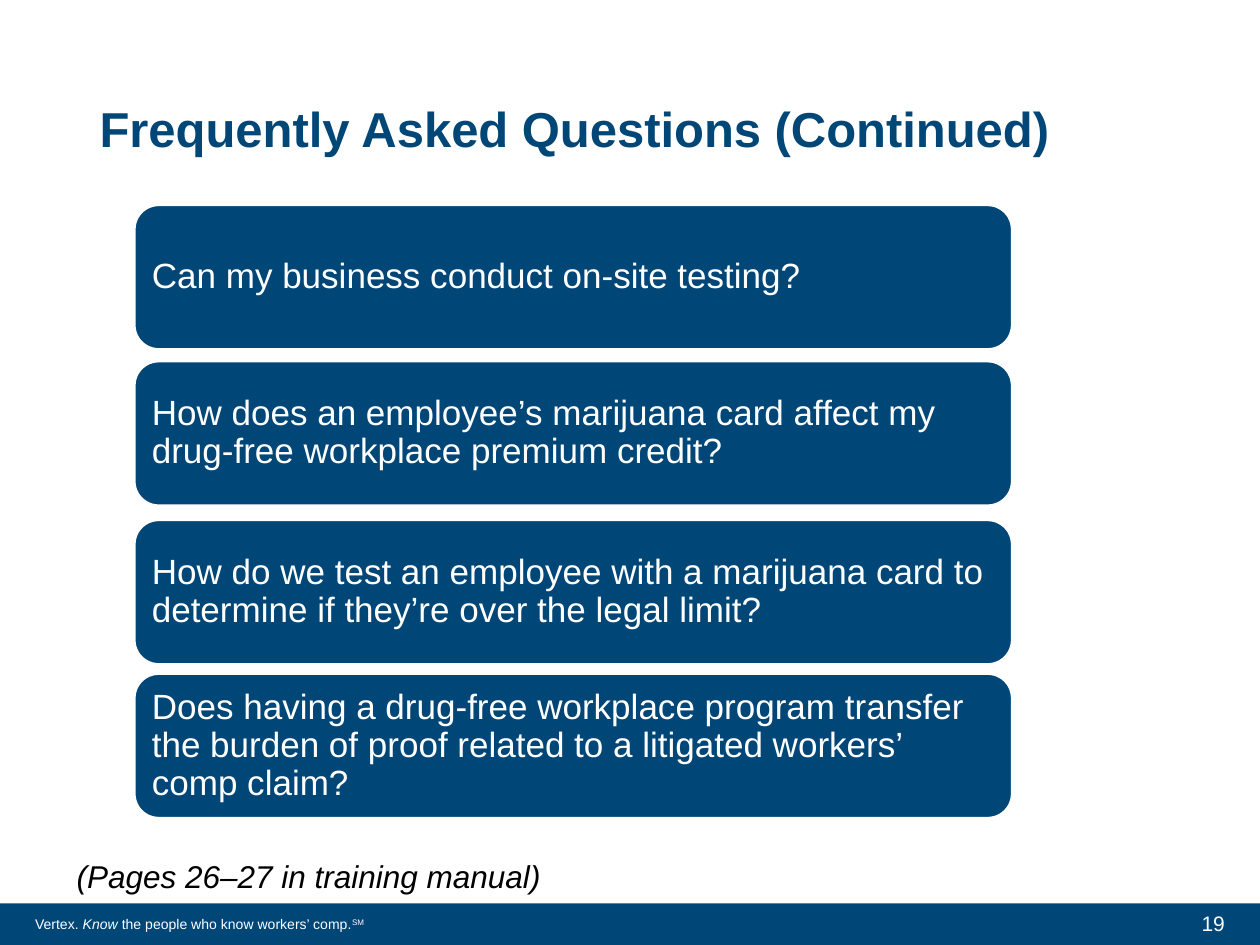
"""Build the frequently asked questions slide of a workplace training deck."""
import pptx
import pptx.dml.color
import pptx.enum.shapes
import pptx.enum.text
import pptx.util
from pptx.util import Inches

NAVY = pptx.dml.color.RGBColor(0x00, 0x46, 0x77)
WHITE = pptx.dml.color.RGBColor(0xFF, 0xFF, 0xFF)
BLACK = pptx.dml.color.RGBColor(0x00, 0x00, 0x00)
FONT = "Arial"
SHAPES = pptx.enum.shapes.MSO_SHAPE
ANCHOR = pptx.enum.text.MSO_ANCHOR
ALIGN = pptx.enum.text.PP_ALIGN

QUESTIONS = [
    (1.63, "Can my business conduct on-site testing?"),
    (2.87, "How does an employee’s marijuana card affect my drug-free workplace premium credit?"),
    (4.13, "How do we test an employee with a marijuana card to determine if they’re over the legal limit?"),
    (5.35, "Does having a drug-free workplace program transfer the burden of proof "
           "related to a litigated workers’ comp claim?"),
]


def format_run(run, size, color, bold=False, italic=False):
    """Set the font of one run."""
    run.font.name = FONT
    run.font.size = pptx.util.Pt(size)
    run.font.color.rgb = color
    run.font.bold = bold
    run.font.italic = italic


def write_text(shape, text, size, color, anchor=ANCHOR.TOP, align=ALIGN.LEFT,
               line_spacing=1.0, bold=False, italic=False):
    """Write one formatted paragraph into a shape."""
    frame = shape.text_frame
    frame.text = text
    frame.word_wrap = True
    frame.auto_size = pptx.enum.text.MSO_AUTO_SIZE.NONE
    frame.vertical_anchor = anchor
    paragraph = frame.paragraphs[0]
    paragraph.alignment = align
    paragraph.line_spacing = line_spacing
    for run in paragraph.runs:
        format_run(run, size, color, bold, italic)


def add_title(slide, text):
    """Place and format the title placeholder."""
    title = slide.shapes.title
    title.left, title.top = Inches(0.69), Inches(0.32)
    title.width, title.height = Inches(8.62), Inches(1.45)
    write_text(title, text, 28, NAVY, ANCHOR.MIDDLE, line_spacing=0.9, bold=True)


def add_filled_shape(slide, kind, left, top, width, height):
    """Add a navy preset shape without shadow or outline."""
    shape = slide.shapes.add_shape(
        kind, Inches(left), Inches(top), Inches(width), Inches(height))
    shape.shadow.inherit = False
    shape.fill.solid()
    shape.fill.fore_color.rgb = NAVY
    shape.line.fill.background()
    return shape


def add_question(slide, top, text):
    """Add one rounded question card."""
    card = add_filled_shape(slide, SHAPES.ROUNDED_RECTANGLE, 1.07, top, 6.96, 1.14)
    card.line.color.rgb = WHITE
    card.line.width = pptx.util.Pt(1)
    frame = card.text_frame
    frame.margin_left = frame.margin_right = Inches(0.08)
    frame.margin_top = frame.margin_bottom = Inches(0.08)
    write_text(card, text, 20, WHITE, ANCHOR.MIDDLE, line_spacing=0.9)


def add_text(slide, left, top, width, height, text, size, color, **options):
    """Add a text box with one paragraph."""
    box = slide.shapes.add_textbox(
        Inches(left), Inches(top), Inches(width), Inches(height))
    write_text(box, text, size, color, **options)
    return box


def add_footer(slide):
    """Add the footer band with its slogan and the slide number."""
    add_filled_shape(slide, SHAPES.RECTANGLE, 0, 7.17, 10, 0.34)
    slogan = add_text(slide, 0.18, 7.22, 3.47, 0.37, "Vertex. ", 8, WHITE)
    paragraph = slogan.text_frame.paragraphs[0]
    for text, italic in [("Know", True), (" the people who know workers’ comp.", False), ("SM", False)]:
        run = paragraph.add_run()
        run.text = text
        format_run(run, 8, WHITE, italic=italic)
    run._r.get_or_add_rPr().set("baseline", "30000")
    add_text(slide, 7.57, 7.13, 2.25, 0.4, "19", 12, WHITE,
             anchor=ANCHOR.MIDDLE, align=ALIGN.RIGHT)


def main():
    """Build and save the slide."""
    presentation = pptx.Presentation()
    presentation.slide_width, presentation.slide_height = Inches(10), Inches(7.5)
    slide = presentation.slides.add_slide(presentation.slide_layouts[5])
    add_title(slide, "Frequently Asked Questions (Continued)")
    add_footer(slide)
    add_text(slide, 0.51, 6.79, 4.25, 0.51, "(Pages 26–27 in training manual)",
             18, BLACK, line_spacing=0.9, italic=True)
    for top, question in QUESTIONS:
        add_question(slide, top, question)
    presentation.save("out.pptx")


if __name__ == "__main__":
    main()
